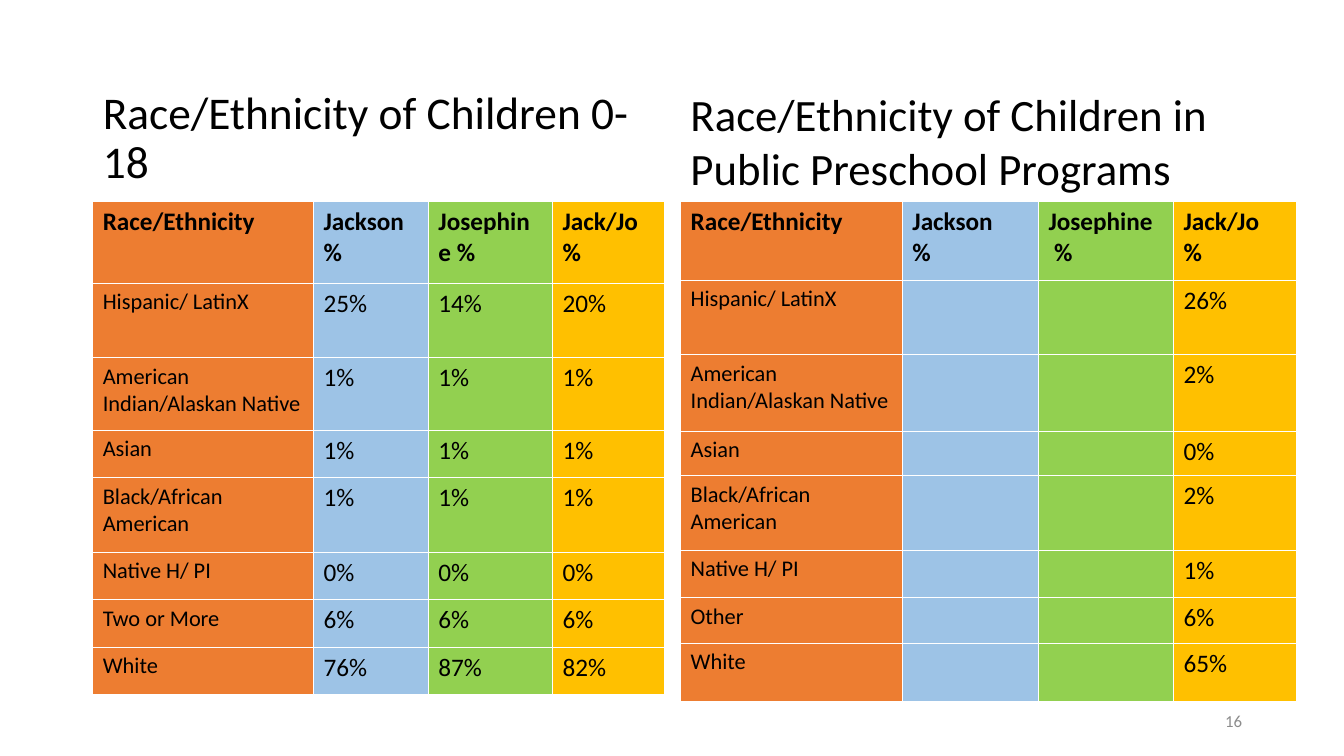
"""Build a slide with two tables on the race and ethnicity of children."""
from pptx import Presentation, util as u
from pptx.dml.color import RGBColor
from pptx.enum import text

BLACK = RGBColor(0x00, 0x00, 0x00)
GRAY = RGBColor(0x8C, 0x8C, 0x8C)
ORANGE = RGBColor(0xED, 0x7D, 0x31)
BLUE = RGBColor(0x9D, 0xC3, 0xE6)
GREEN = RGBColor(0x92, 0xD0, 0x50)
GOLD = RGBColor(0xFF, 0xC0, 0x00)
COLUMN_FILLS = [ORANGE, BLUE, GREEN, GOLD]

deck = Presentation()
deck.slide_width, deck.slide_height = u.Inches(13.33), u.Inches(7.5)
COL, ROW = deck.slide_width / 100, deck.slide_height / 100
slide = deck.slides.add_slide(deck.slide_layouts[5])


def place(part, left, top, width, height):
    """Position a part in hundredths of the slide's width and height."""
    values = {"left": left * COL, "top": top * ROW, "width": width * COL, "height": height * ROW}
    for name, value in values.items():
        setattr(part, name, int(value))


def write(frame, words, size, color=BLACK, bold=False, align=text.PP_ALIGN.LEFT, spacing=1.0):
    """Fill a text frame, one paragraph per line of words."""
    frame.text = words
    style = {"name": "Calibri", "size": u.Pt(size), "bold": bold}
    for paragraph in frame.paragraphs:
        paragraph.alignment, paragraph.line_spacing = align, spacing
        paragraph.space_before = u.Pt(0)
        for font in [paragraph.font] + [run.font for run in paragraph.runs]:
            for name, value in style.items():
                setattr(font, name, value)
            font.color.rgb = color


all_children = slide.shapes.title
preschoolers = slide.shapes.add_textbox(0, 0, 0, 0)
page_number = slide.shapes.add_textbox(0, 0, 0, 0)

place(all_children, 6.9, 8.8, 42.53, 15.6)
place(preschoolers, 50.64, 6.67, 42.46, 19.73)
place(page_number, 70.67, 92.67, 22.5, 5.33)

write(all_children.text_frame, "Race/Ethnicity of Children 0-18", 32.4, spacing=0.9)
write(preschoolers.text_frame, "Race/Ethnicity of Children in Public Preschool Programs", 32)
write(page_number.text_frame, "16", 12, GRAY, align=text.PP_ALIGN.RIGHT)

TOP, MIDDLE = text.MSO_ANCHOR.TOP, text.MSO_ANCHOR.MIDDLE
for part, anchor, inset in [
    (all_children, TOP, 3.2),
    (preschoolers, TOP, 4.8),
    (page_number, MIDDLE, 0.67),
]:
    layout = {
        "word_wrap": True,
        "auto_size": text.MSO_AUTO_SIZE.NONE,
        "vertical_anchor": anchor,
        "margin_top": int(inset * ROW),
    }
    for name, value in layout.items():
        setattr(part.text_frame, name, value)

tables = [
    {
        "left": 6.9,
        "columns": [16.43, 8.55, 9.23, 8.33],
        "rows": [10.8, 9.87, 9.6, 6.27, 9.87, 6.27, 6.27, 6.27],
        "cells": [
            ["Race/Ethnicity", "Jackson\n%", "Josephine %", "Jack/Jo\n%"],
            ["Hispanic/ LatinX", "25%", "14%", "20%"],
            ["American Indian/Alaskan Native", "1%", "1%", "1%"],
            ["Asian", "1%", "1%", "1%"],
            ["Black/African American", "1%", "1%", "1%"],
            ["Native H/ PI", "0%", "0%", "0%"],
            ["Two or More", "6%", "6%", "6%"],
            ["White", "76%", "87%", "82%"],
        ],
    },
    {
        "left": 50.64,
        "columns": [16.5, 10.13, 10.05, 9.15],
        "rows": [10.4, 9.87, 10.13, 5.87, 9.87, 6.27, 6, 7.73],
        "cells": [
            ["Race/Ethnicity", "Jackson\n%", "Josephine\n %", "Jack/Jo\n%"],
            ["Hispanic/ LatinX", "", "", "26%"],
            ["American Indian/Alaskan Native", "", "", "2%"],
            ["Asian", "", "", "0%"],
            ["Black/African American", "", "", "2%"],
            ["Native H/ PI", "", "", "1%"],
            ["Other", "", "", "6%"],
            ["White", "", "", "65%"],
        ],
    },
]

for shares in tables:
    holder = slide.shapes.add_table(len(shares["rows"]), len(shares["columns"]), 0, 0, 0, 0)
    place(holder, shares["left"], 26.67, sum(shares["columns"]), sum(shares["rows"]))
    grid = holder.table
    grid.horz_banding = False
    for column, width in zip(grid.columns, shares["columns"]):
        column.width = int(width * COL)
    for r, (height, entries) in enumerate(zip(shares["rows"], shares["cells"])):
        grid.rows[r].height = int(height * ROW)
        for c, (entry, fill) in enumerate(zip(entries, COLUMN_FILLS)):
            cell = grid.cell(r, c)
            cell.fill.solid()
            cell.fill.fore_color.rgb = fill
            write(cell.text_frame, entry, 16 if r and c == 0 else 18, bold=r == 0)

deck.save("out.pptx")
